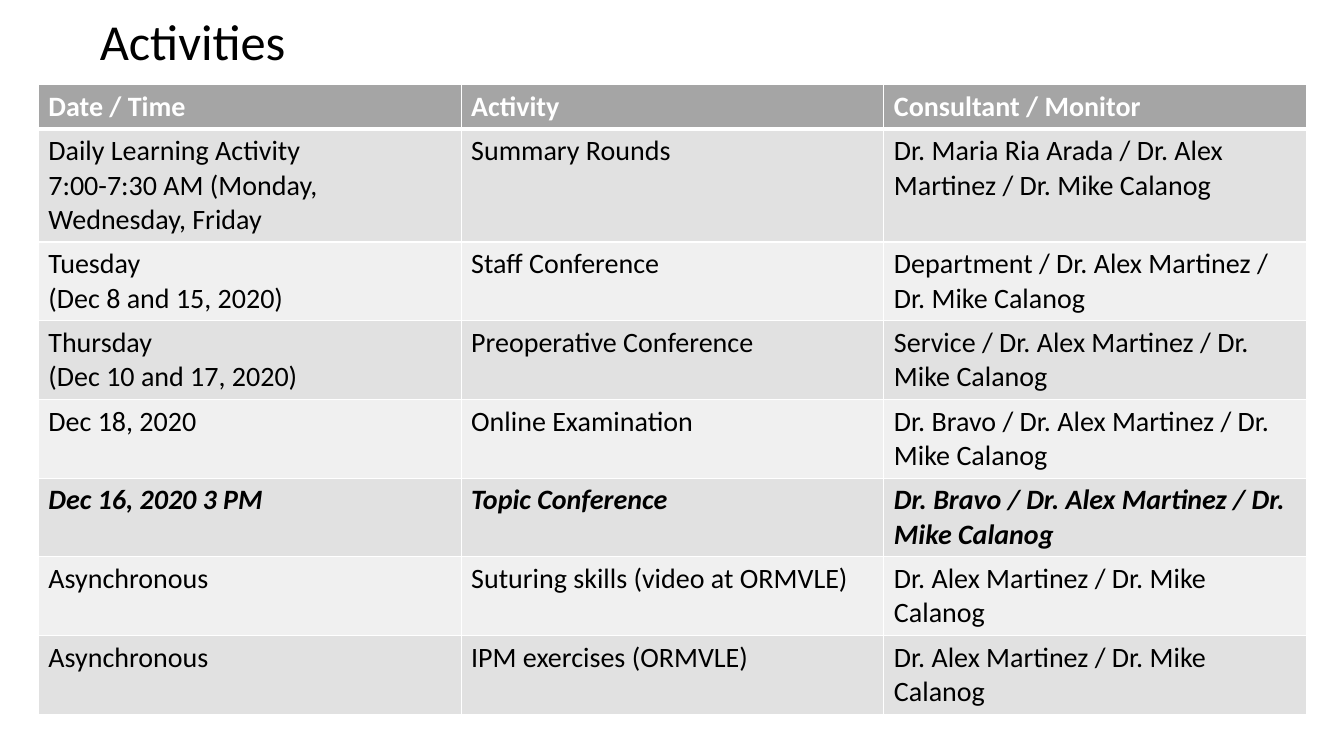
import pptx
import pptx.dml.color
import pptx.enum.text
import pptx.oxml
import pptx.oxml.ns
import pptx.util
from dataclasses import dataclass

Inches = pptx.util.Inches
Pt = pptx.util.Pt


@dataclass(frozen=True)
class Theme:
    font: str = "Calibri"
    title_size: int = 36
    table_size: int = 20
    ink: str = "000000"
    white: str = "FFFFFF"
    header_fill: str = "A5A5A5"
    bands: tuple = ("E1E1E1", "F0F0F0")
    border: float = 1
    header_rule: float = 3


THEME = Theme()
MONITORS = "Dr. Alex Martinez / Dr. Mike Calanog"
HEADINGS = ("Date / Time", "Activity", "Consultant / Monitor")
ACTIVITIES = [
    ("Daily Learning Activity\n7:00-7:30 AM (Monday, Wednesday, Friday",
     "Summary Rounds", f"Dr. Maria Ria Arada / {MONITORS}"),
    ("Tuesday\n(Dec 8 and 15, 2020)", "Staff Conference", f"Department / {MONITORS}"),
    ("Thursday\n(Dec 10 and 17, 2020)", "Preoperative Conference", f"Service / {MONITORS}"),
    ("Dec 18, 2020", "Online Examination", f"Dr. Bravo / {MONITORS}"),
    ("Dec 16, 2020 3 PM", "Topic Conference", f"Dr. Bravo / {MONITORS}"),
    ("Asynchronous", "Suturing skills (video at ORMVLE)", MONITORS),
    ("Asynchronous", "IPM exercises (ORMVLE)", MONITORS),
]
HIGHLIGHT = "Topic Conference"


def rgb(color):
    return pptx.dml.color.RGBColor.from_string(color)


def write_text(frame, text, color, **font_format):
    """Write one paragraph per line, all in the same format."""
    frame.text = text
    for paragraph in frame.paragraphs:
        for run in paragraph.runs:
            run.font.color.rgb = rgb(color)
            for name, value in {"name": THEME.font, **font_format}.items():
                setattr(run.font, name, value)


def add_borders(cell, bottom_width):
    widths = {"lnL": THEME.border, "lnR": THEME.border,
              "lnT": THEME.border, "lnB": bottom_width}
    properties = cell._tc.get_or_add_tcPr()
    for side, width in widths.items():
        properties.append(pptx.oxml.parse_xml(
            f'<a:{side} {pptx.oxml.ns.nsdecls("a")} w="{Pt(width)}">'
            f'<a:solidFill><a:srgbClr val="{THEME.white}"/></a:solidFill></a:{side}>'))


def fill_row(row, texts, fill, color, bottom_width, **font_format):
    for cell, text in zip(row.cells, texts):
        add_borders(cell, bottom_width)
        cell.fill.solid()
        cell.fill.fore_color.rgb = rgb(fill)
        write_text(cell.text_frame, text, color,
                   size=Pt(THEME.table_size), **font_format)


def add_title(slide, text):
    title = slide.shapes.title
    place = {"left": 0.89, "top": 0.11, "width": 11.5, "height": 0.66}
    for name, value in place.items():
        setattr(title, name, Inches(value))
    frame = title.text_frame
    frame.auto_size = pptx.enum.text.MSO_AUTO_SIZE.NONE
    frame.vertical_anchor = pptx.enum.text.MSO_ANCHOR.MIDDLE
    write_text(frame, text, THEME.ink, size=Pt(THEME.title_size))
    frame.paragraphs[0].alignment = pptx.enum.text.PP_ALIGN.LEFT
    frame.paragraphs[0].line_spacing = 0.9


def add_schedule(slide):
    row_count = len(ACTIVITIES) + 1
    schedule = slide.shapes.add_table(
        row_count, len(HEADINGS), Inches(0.38), Inches(0.84),
        Inches(12.58), Inches(0.41 * row_count)).table
    header, *body = schedule.rows
    fill_row(header, HEADINGS, THEME.header_fill, THEME.white,
             THEME.header_rule, bold=True, italic=False)
    for index, (row, activity) in enumerate(zip(body, ACTIVITIES)):
        strong = HIGHLIGHT in activity
        fill_row(row, activity, THEME.bands[index % 2], THEME.ink,
                 THEME.border, bold=strong, italic=strong)
    # The rule under the header is shared with the first body row
    for cell in body[0].cells:
        cell._tc.tcPr.find(pptx.oxml.ns.qn("a:lnT")).set("w", str(Pt(THEME.header_rule)))


def main():
    deck = pptx.Presentation()
    deck.slide_width, deck.slide_height = Inches(13.33), Inches(7.5)
    slide = deck.slides.add_slide(deck.slide_layouts[5])  # title only
    add_title(slide, "Activities")
    add_schedule(slide)
    deck.save("out.pptx")


if __name__ == "__main__":
    main()
